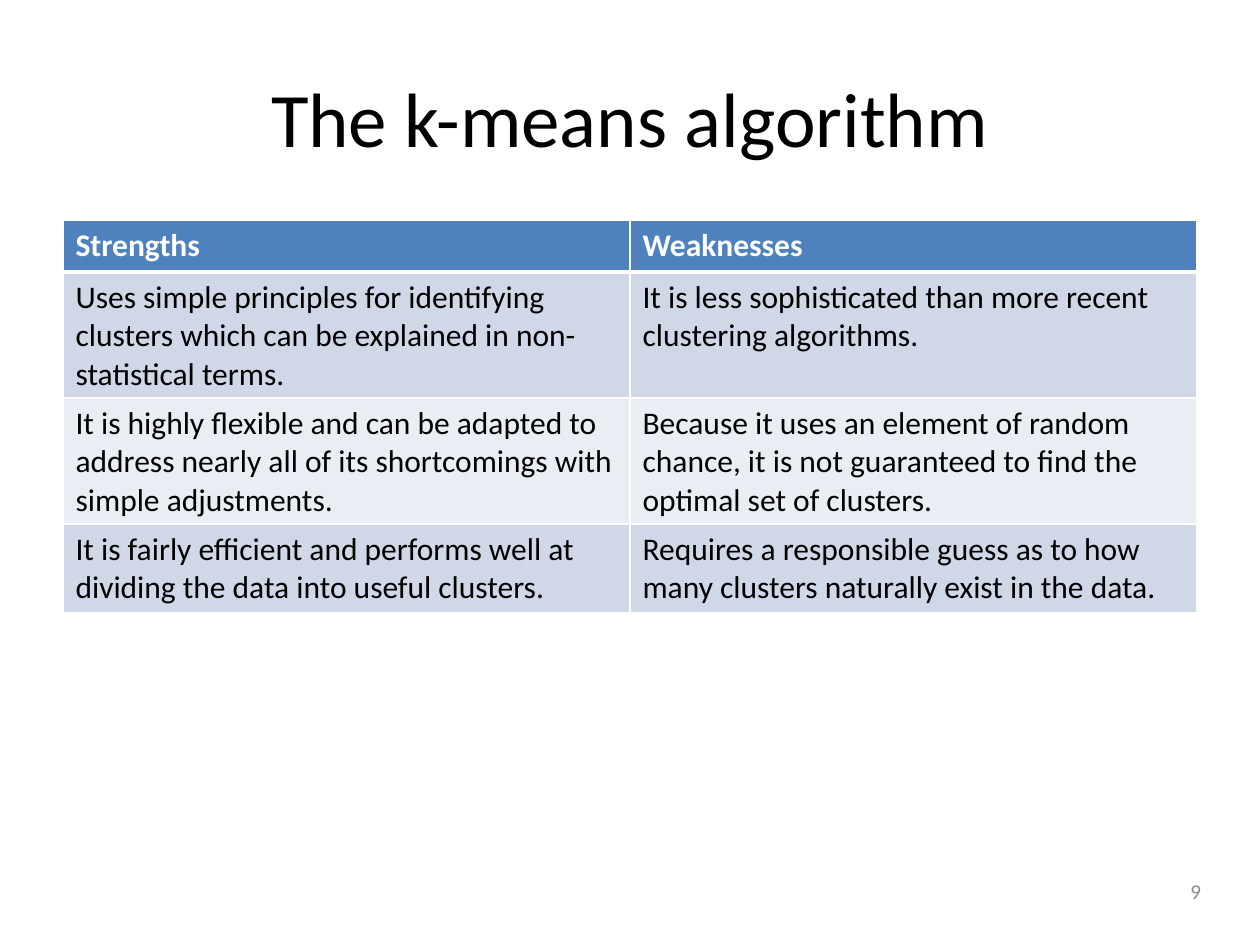
from lxml.etree import SubElement
from pptx import Presentation
from pptx.dml.color import RGBColor
from pptx.enum.text import MSO_ANCHOR, PP_ALIGN
from pptx.oxml.ns import qn
from pptx.util import Inches, Pt

FONT = "Calibri"
HEADER_FILL = "4F81BD"
BAND_FILLS = ("D0D8E8", "E9EDF4")
ROWS = [
    ("Strengths", "Weaknesses"),
    (
        "Uses simple principles for identifying clusters which can be explained in non-statistical terms.",
        "It is less sophisticated than more recent clustering algorithms.",
    ),
    (
        "It is highly flexible and can be adapted to address nearly all of its shortcomings with simple adjustments.",
        "Because it uses an element of random chance, it is not guaranteed to find the optimal set of clusters.",
    ),
    (
        "It is fairly efficient and performs well at dividing the data into useful clusters.",
        "Requires a responsible guess as to how many clusters naturally exist in the data.",
    ),
]


def color(value):
    """Turn a hex string into a colour."""
    return RGBColor.from_string(value)


def format_text(text_frame, size, hex_color, bold=False):
    """Set the font of the first paragraph's runs."""
    for run in text_frame.paragraphs[0].runs:
        run.font.name = FONT
        run.font.size = Pt(size)
        run.font.bold = bold
        run.font.color.rgb = color(hex_color)


def add_text(slide, box, text, size, hex_color, alignment):
    """Add one line of vertically centred text in the box."""
    text_frame = slide.shapes.add_textbox(*map(Inches, box)).text_frame
    text_frame.word_wrap = True
    text_frame.vertical_anchor = MSO_ANCHOR.MIDDLE
    text_frame.text = text
    text_frame.paragraphs[0].alignment = alignment
    format_text(text_frame, size, hex_color)


def set_borders(cell, top, bottom):
    """Draw white borders around a cell, with side lines of one point."""
    properties = cell._tc.get_or_add_tcPr()
    for side, width in (("L", 1), ("R", 1), ("T", top), ("B", bottom)):
        line = SubElement(properties, qn(f"a:ln{side}"), w=str(Pt(width)))
        fill = SubElement(line, qn("a:solidFill"))
        SubElement(fill, qn("a:srgbClr"), val="FFFFFF")


def add_comparison(slide, box, rows):
    """Add the banded table of strengths and weaknesses."""
    left, top, width, row_height = map(Inches, box)
    table = slide.shapes.add_table(
        len(rows), len(rows[0]), left, top, width, row_height * len(rows)
    ).table
    for row_index, texts in enumerate(rows):
        is_header = row_index == 0
        fill = HEADER_FILL if is_header else BAND_FILLS[(row_index - 1) % 2]
        for column_index, text in enumerate(texts):
            cell = table.cell(row_index, column_index)
            set_borders(cell, 3 if row_index == 1 else 1, 3 if is_header else 1)
            cell.fill.solid()
            cell.fill.fore_color.rgb = color(fill)
            cell.text_frame.text = text
            format_text(cell.text_frame, 18, "FFFFFF" if is_header else "000000", is_header)


def main():
    """Build and save the slide."""
    presentation = Presentation()
    presentation.slide_width = Inches(10)
    presentation.slide_height = Inches(7.5)
    slide = presentation.slides.add_slide(presentation.slide_layouts[6])
    add_text(slide, (7.3, 6.87, 2.33, 0.4), "9", 12, "8C8C8C", PP_ALIGN.RIGHT)
    add_text(slide, (0.5, 0.3, 9, 1.25), "The k-means algorithm", 44, "000000", PP_ALIGN.CENTER)
    add_comparison(slide, (0.5, 1.75, 9, 0.41), ROWS)
    presentation.save("out.pptx")


if __name__ == "__main__":
    main()
